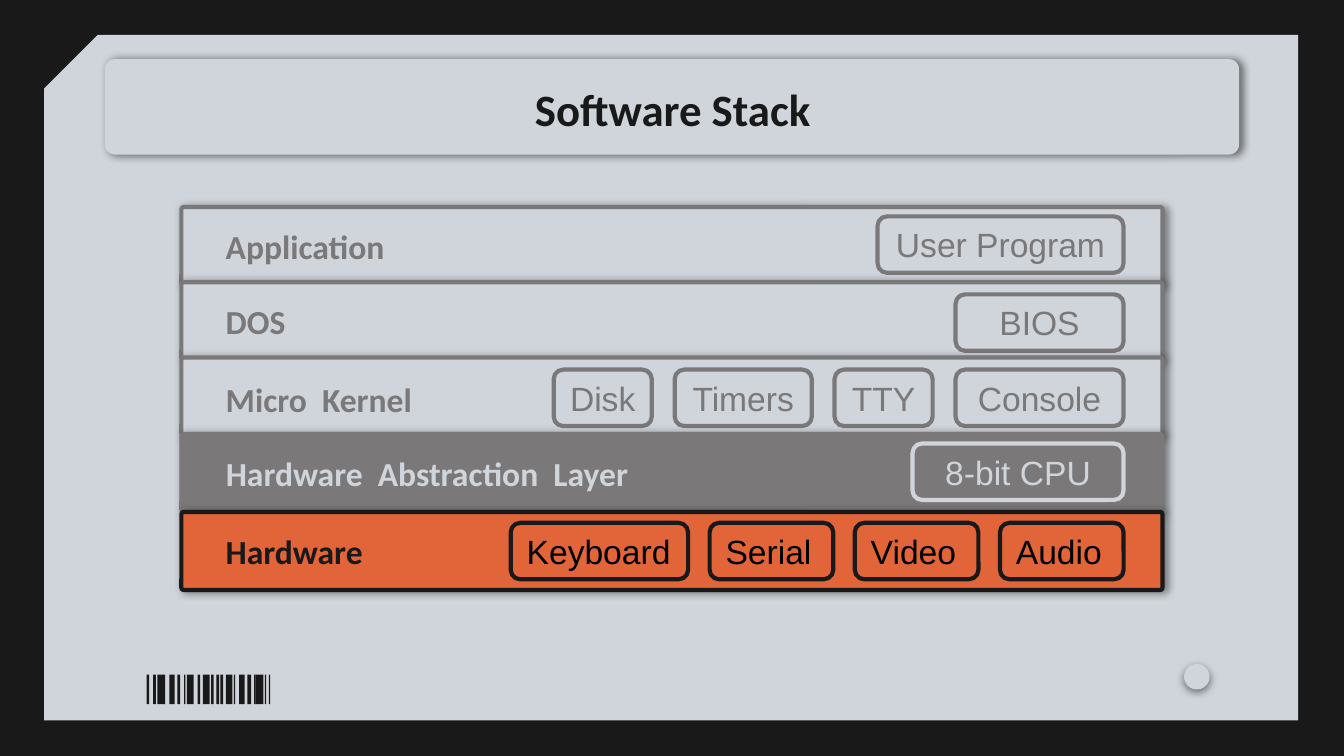
from lxml import etree
from pptx import Presentation
from pptx.dml.color import RGBColor
from pptx.enum import shapes, text
from pptx.oxml.ns import qn
from pptx.util import Inches, Pt

INK = RGBColor(0x19, 0x19, 0x19)
BLACK = RGBColor(0x00, 0x00, 0x00)
PAPER = RGBColor(0xD0, 0xD5, 0xDB)
GRAY = RGBColor(0x7A, 0x78, 0x79)
ORANGE = RGBColor(0xE1, 0x65, 0x39)

SHAPE = shapes.MSO_SHAPE
LEFT, CENTER = text.PP_ALIGN.LEFT, text.PP_ALIGN.CENTER

ROW_LEFT, ROW_WIDTH, ROW_HEIGHT = 1.35, 7.3, 0.58
CHIP_RIGHT, CHIP_HEIGHT = 8.36, 0.42

# Tops of row, label and chips; label and its width; fill, line, label colour,
# chip line, chip text, alignment; chip gap and chips
ROWS = [
    (1.54, 1.54, 1.61, "Application", 2.26,
     PAPER, GRAY, GRAY, GRAY, GRAY, CENTER, 0.17, [("User Program", 1.83)]),
    (2.10, 2.10, 2.19, "DOS", 2.26,
     PAPER, GRAY, GRAY, GRAY, GRAY, CENTER, 0.17, [("BIOS", 1.25)]),
    (2.66, 2.68, 2.75, "Micro  Kernel", 2.26,
     PAPER, GRAY, GRAY, GRAY, GRAY, CENTER, 0.17,
     [("Disk", 0.73), ("Timers", 1.02), ("TTY", 0.73), ("Console", 1.25)]),
    (3.23, 3.23, 3.30, "Hardware  Abstraction  Layer", 5.42,
     GRAY, GRAY, PAPER, PAPER, PAPER, CENTER, 0.17, [("8-bit CPU", 1.57)]),
    (3.81, 3.81, 3.89, "Hardware", 2.26,
     ORANGE, INK, INK, INK, BLACK, LEFT, 0.16,
     [("Keyboard", 1.32), ("Serial", 0.92), ("Video", 0.92), ("Audio", 0.92)]),
]

# Left edge and width of each bar
BARS = [
    (1.09, 0.02), (1.14, 0.02), (1.17, 0.05), (1.22, 0.01), (1.26, 0.04),
    (1.32, 0.02), (1.37, 0.01), (1.39, 0.05), (1.47, 0.02), (1.51, 0.05),
    (1.57, 0.02), (1.61, 0.02), (1.64, 0.02), (1.68, 0.05), (1.74, 0.01),
    (1.78, 0.04), (1.84, 0.03), (1.89, 0.01), (1.90, 0.06), (1.97, 0.01),
    (2.00, 0.01),
]


def add_shadow(shape, color, angle):
    effects = shape._element.spPr.find(qn("a:effectLst"))
    shadow = etree.SubElement(
        effects, qn("a:outerShdw"), blurRad=str(Pt(4.5)), dist=str(Pt(1.5)),
        dir=str(angle * 60000), algn="bl", rotWithShape="0")
    tint = etree.SubElement(shadow, qn("a:srgbClr"), val=str(color))
    etree.SubElement(tint, qn("a:alpha"), val="50000")


def add_box(parent, kind, left, top, width, height, fill=None, line=None,
            corner=None):
    shape = parent.shapes.add_shape(
        kind, Inches(left), Inches(top), Inches(width), Inches(height))
    shape.shadow.inherit = False
    if fill is None:
        shape.fill.background()
    else:
        shape.fill.solid()
        shape.fill.fore_color.rgb = fill
    if line is None:
        shape.line.fill.background()
    else:
        shape.line.color.rgb = line
        shape.line.width = Pt(2.25)
    if corner is not None:
        shape.adjustments[0] = corner
    return shape


def write(shape, words, color, size=18, font="Calibri", bold=False,
          align=LEFT, side=0.1):
    frame = shape.text_frame
    frame.word_wrap = True
    frame.vertical_anchor = text.MSO_ANCHOR.MIDDLE
    frame.margin_left = frame.margin_right = Inches(side)
    frame.margin_top = frame.margin_bottom = Inches(0.1)
    paragraph = frame.paragraphs[0]
    paragraph.alignment = align
    run = paragraph.add_run()
    run.text = words
    run.font.name = font
    run.font.size = Pt(size)
    run.font.bold = bold
    run.font.color.rgb = color


def add_label(slide, left, top, width, height, words, color, **style):
    box = slide.shapes.add_textbox(
        Inches(left), Inches(top), Inches(width), Inches(height))
    write(box, words, color, bold=True, **style)


def add_backdrop(slide):
    slide.background.fill.solid()
    slide.background.fill.fore_color.rgb = INK
    panel = add_box(slide, SHAPE.SNIP_1_RECTANGLE, 0.33, 0.26, 9.33, 5.1,
                    fill=PAPER, corner=0.078)
    panel._element.spPr.find(qn("a:xfrm")).set("flipH", "1")
    banner = add_box(slide, SHAPE.ROUNDED_RECTANGLE, 0.78, 0.44, 8.44, 0.71,
                     fill=PAPER, corner=0.106)
    add_shadow(banner, BLACK, 6)
    dot = add_box(slide, SHAPE.OVAL, 8.81, 4.94, 0.19, 0.19, fill=PAPER)
    add_shadow(dot, BLACK, 90)


def add_barcode(slide):
    barcode = slide.shapes.add_group_shape()
    for left, width in BARS:
        add_box(barcode, SHAPE.RECTANGLE, left, 5.02, width, 0.22, fill=INK)


def add_row(slide, top, label_top, chip_top, label, label_width, fill, line,
            label_color, chip_line, chip_color, align, gap, chips):
    row = add_box(slide, SHAPE.ROUNDED_RECTANGLE, ROW_LEFT, top, ROW_WIDTH,
                  ROW_HEIGHT, fill=fill, line=line, corner=0.031)
    add_shadow(row, INK, 6)
    add_label(slide, 1.68, label_top, label_width, ROW_HEIGHT, label,
              label_color, side=0)

    # Chips run leftwards from a shared right edge
    right = CHIP_RIGHT
    for words, width in reversed(chips):
        chip = add_box(slide, SHAPE.ROUNDED_RECTANGLE, right - width, chip_top,
                       width, CHIP_HEIGHT, line=chip_line, corner=0.167)
        write(chip, words, chip_color, font="Arial", align=align)
        right -= width + gap


def main():
    # Widescreen page, 16 by 9
    presentation = Presentation()
    presentation.slide_width = Inches(10)
    presentation.slide_height = Inches(10 * 9 / 16)
    slide = presentation.slides.add_slide(presentation.slide_layouts[6])

    # Frame and decoration
    add_backdrop(slide)
    add_barcode(slide)

    # Title
    add_label(slide, 0.79, 0.49, 8.43, 0.63, "Software Stack", INK, size=24,
              align=CENTER)

    # Stack, from top to bottom
    for row in ROWS:
        add_row(slide, *row)

    presentation.save("out.pptx")


if __name__ == "__main__":
    main()
